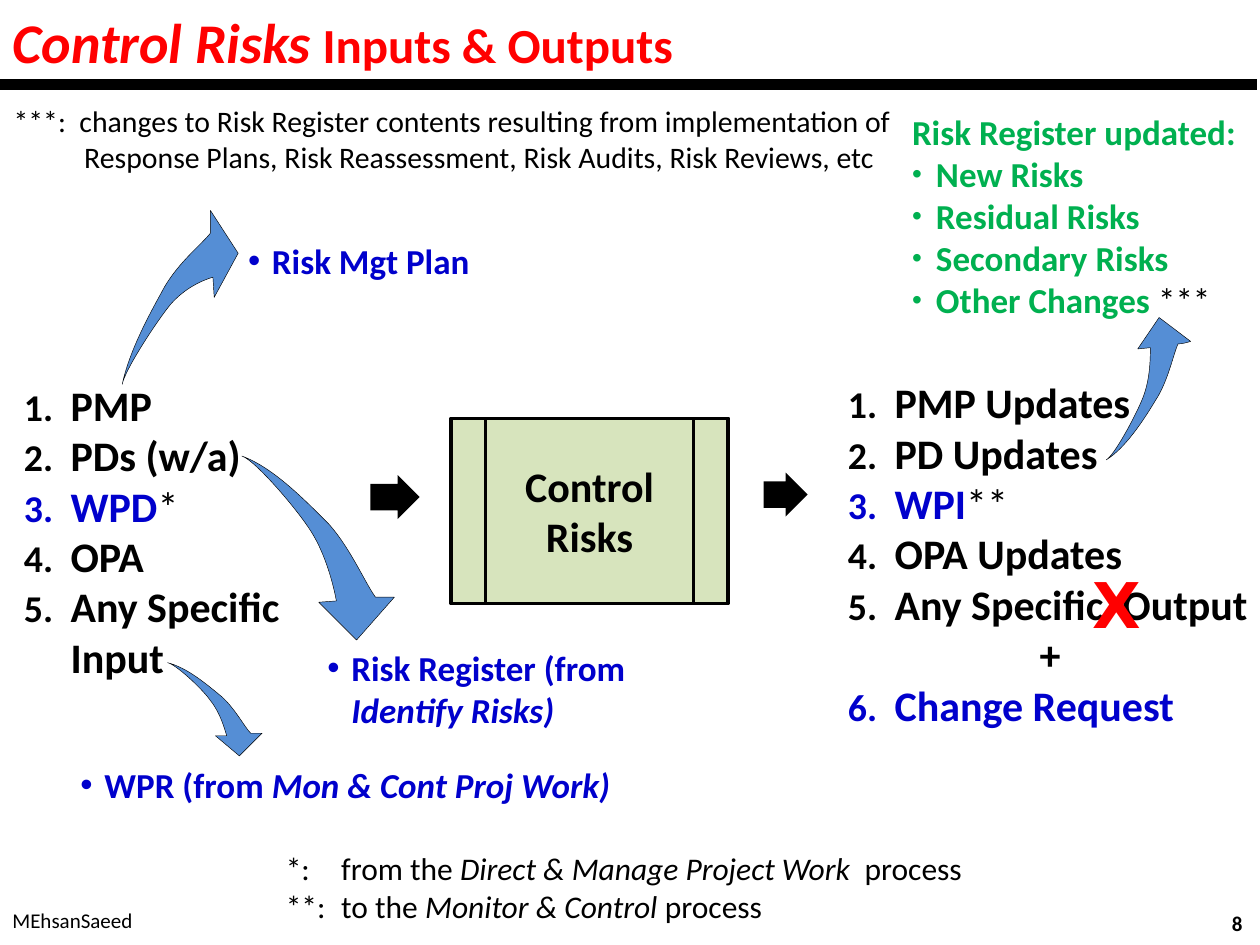
from lxml import etree
from pptx import Presentation
from pptx import util as u
from pptx.dml.color import RGBColor
from pptx.enum import shapes, text
from pptx.oxml.ns import qn

BLACK = RGBColor(0x00, 0x00, 0x00)
RED = RGBColor(0xFF, 0x00, 0x00)
BLUE = RGBColor(0x00, 0x00, 0xCC)
GREEN = RGBColor(0x00, 0xB0, 0x50)
PALE_GREEN = RGBColor(0xD7, 0xE4, 0xBD)
ARROW_BLUE = RGBColor(0x55, 0x8E, 0xD5)
LEFT, CENTER, RIGHT = text.PP_ALIGN.LEFT, text.PP_ALIGN.CENTER, text.PP_ALIGN.RIGHT
TOP, MIDDLE = text.MSO_ANCHOR.TOP, text.MSO_ANCHOR.MIDDLE

PLAN_ARROW = [
    [(0.97, 3.05)], [(0.99, 2.94), (1.23, 2.57), (1.35, 2.42)],
    [(1.47, 2.28), (1.62, 2.22), (1.69, 2.2)], [(1.7, 2.36)], [(1.89, 2.01)],
    [(1.67, 1.67)], [(1.67, 1.73), (1.67, 1.79), (1.67, 1.85)],
    [(1.6, 1.94), (1.43, 2.07), (1.31, 2.27)], [(1.2, 2.47), (1.03, 2.77), (0.97, 3.05)],
]
REGISTER_ARROW = [
    [(1.92, 3.62)], [(2.02, 3.65), (2.35, 4.03), (2.47, 4.22)],
    [(2.59, 4.41), (2.65, 4.66), (2.67, 4.77)], [(2.53, 4.78)], [(2.83, 5.08)],
    [(3.13, 4.74)], [(3.08, 4.74), (3.03, 4.74), (2.98, 4.74)],
    [(2.9, 4.63), (2.78, 4.35), (2.61, 4.16)], [(2.43, 3.98), (2.17, 3.71), (1.92, 3.62)],
]
UPDATES_ARROW = [
    [(8.78, 3.65)], [(8.84, 3.62), (9.01, 3.31), (9.07, 3.16)],
    [(9.13, 3.01), (9.13, 2.84), (9.13, 2.76)], [(9.03, 2.77)], [(9.2, 2.52)],
    [(9.45, 2.71)], [(9.42, 2.72), (9.38, 2.73), (9.35, 2.73)],
    [(9.31, 2.82), (9.27, 3.03), (9.17, 3.18)], [(9.08, 3.33), (8.93, 3.56), (8.78, 3.65)],
]
REPORTS_ARROW = [
    [(1.33, 5.26)], [(1.39, 5.27), (1.6, 5.46), (1.67, 5.56)],
    [(1.75, 5.66), (1.78, 5.78), (1.8, 5.84)], [(1.71, 5.84)], [(1.9, 6)],
    [(2.08, 5.82)], [(2.05, 5.82), (2.02, 5.82), (1.99, 5.82)],
    [(1.94, 5.77), (1.87, 5.63), (1.76, 5.53)], [(1.65, 5.44), (1.49, 5.3), (1.33, 5.26)],
]


def inches(values):
    """Convert a sequence of numbers to lengths."""
    return [u.Inches(value) for value in values]


def place(shape, box):
    """Move and size a shape to a left, top, width, height box."""
    shape.left, shape.top, shape.width, shape.height = inches(box)


def set_list_style(paragraph, indent=0, bullet=None, start=1, percent=100):
    """Set the hanging indent and the bullet: None, a character or 'number'."""
    properties = paragraph._p.get_or_add_pPr()
    properties.set("marL", str(u.Inches(indent)))
    properties.set("indent", str(-u.Inches(indent)))
    if bullet is None:
        etree.SubElement(properties, qn("a:buNone"))
        return
    etree.SubElement(properties, qn("a:buSzPct"), val=str(percent * 1000))
    if bullet == "number":
        numbering = etree.SubElement(properties, qn("a:buAutoNum"), type="arabicPeriod")
        if start > 1:
            numbering.set("startAt", str(start))
    else:
        etree.SubElement(properties, qn("a:buFont"), typeface="Arial")
        etree.SubElement(properties, qn("a:buChar"), char=bullet)


def add_run(paragraph, words, size, color=BLACK, bold=False, italic=False, font="Calibri"):
    """Add one formatted run."""
    run = paragraph.add_run()
    run.text = words
    run.font.name, run.font.size = font, u.Pt(size)
    run.font.bold, run.font.italic = bold, italic
    run.font.color.rgb = color


def write(shape, paragraphs, size, anchor=TOP, align=LEFT, wrap=True):
    """Fill a shape with (runs, list style) pairs, a run being (words, run format)."""
    frame = shape.text_frame
    frame.auto_size = text.MSO_AUTO_SIZE.NONE
    frame.word_wrap, frame.vertical_anchor = wrap, anchor
    for index, (runs, style) in enumerate(paragraphs):
        paragraph = frame.add_paragraph() if index else frame.paragraphs[0]
        style = dict(style)
        paragraph.alignment = style.pop("align", align)
        paragraph.space_before = u.Pt(0)
        set_list_style(paragraph, **style)
        for words, run_format in runs:
            add_run(paragraph, words, **{"size": size, **run_format})


def add_text(slide, box, paragraphs, size, **layout):
    """Add a text box."""
    write(slide.shapes.add_textbox(*inches(box)), paragraphs, size, **layout)


def add_preset(slide, kind, box, fill, line_width=None):
    """Add a preset shape, outlined in black if a line width is given."""
    shape = slide.shapes.add_shape(kind, *inches(box))
    paint(shape, fill, line_width)
    return shape


def paint(shape, fill, line_width):
    """Set the fill and line of a shape without a shadow."""
    shape.shadow.inherit = False
    shape.fill.solid()
    shape.fill.fore_color.rgb = fill
    if line_width is None:
        shape.line.fill.background()
    else:
        shape.line.color.rgb = BLACK
        shape.line.width = u.Pt(line_width)


def add_block_arrow(slide, box):
    """Add a black arrow pointing right."""
    arrow = add_preset(slide, shapes.MSO_SHAPE.RIGHT_ARROW, box, BLACK)
    arrow.adjustments[0], arrow.adjustments[1] = 0.6, 0.5


def add_curved_arrow(slide, outline):
    """Add a swooping arrow from line (one point) and curve (three points) segments."""
    corners = [inches(segment[-1]) for segment in outline]
    builder = slide.shapes.build_freeform(*corners[0])
    builder.add_line_segments(corners[1:], close=True)
    arrow = builder.convert_to_shape()
    sides = list(arrow._element.iter(qn("a:lnTo")))
    for side, segment in zip(sides, outline[1:]):
        if len(segment) == 3:
            side.getparent().replace(side, make_curve(segment, arrow.left, arrow.top))
    paint(arrow, ARROW_BLUE, 0.25)


def make_curve(segment, left, top):
    """Return a cubic curve element with points relative to left and top."""
    curve = etree.Element(qn("a:cubicBezTo"))
    for x, y in segment:
        etree.SubElement(curve, qn("a:pt"), x=str(u.Inches(x) - left), y=str(u.Inches(y) - top))
    return curve


def add_rule(slide, left, right, top):
    """Add the thick rule under the title."""
    rule = slide.shapes.add_connector(
        shapes.MSO_CONNECTOR.STRAIGHT, *inches((left, top, right, top)))
    rule.line.color.rgb, rule.line.width = BLACK, u.Pt(6)
    etree.SubElement(rule._element.spPr, qn("a:effectLst"))


def main():
    """Build the slide."""
    presentation = Presentation()
    presentation.slide_width, presentation.slide_height = inches((10, 7.5))
    slide = presentation.slides.add_slide(presentation.slide_layouts[3])
    title, inputs, outputs = slide.placeholders
    bold, blue, green = {"bold": True}, {"bold": True, "color": BLUE}, {"bold": True, "color": GREEN}
    red, blue_italic = {"bold": True, "color": RED}, {**blue, "italic": True}
    number = {"indent": 0.37, "bullet": "number", "percent": 90}
    dot = {"indent": 0.19, "bullet": "•"}
    small_dot = {**dot, "percent": 80}
    note = {"indent": 0.44}

    place(title, (0, 0, 9.94, 0.66))
    write(title, [([("Control Risks", {**red, "italic": True, "size": 32}),
                    (" Inputs & Outputs", red)], {})], 28, anchor=MIDDLE)
    add_rule(slide, -0.02, 9.98, 0.67)

    place(inputs, (0.09, 2.96, 2.96, 2.52))
    write(inputs, [([("PMP", bold)], number), ([("PDs (w/a)", bold)], number),
                   ([("WPD", blue), ("*", {})], number), ([("OPA", bold)], number),
                   ([("Any Specific Input", bold)], number)], 24)
    place(outputs, (6.63, 2.94, 3.41, 2.93))
    write(outputs, [([("PMP Updates", bold)], number), ([("PD Updates", bold)], number),
                    ([("WPI", blue), ("**", {})], number), ([("OPA Updates", bold)], number),
                    ([("Any Specific  Output", bold)], number),
                    ([("+", bold)], {"align": CENTER}),
                    ([("Change Request", blue)], {**number, "start": 6})], 24, wrap=False)

    process = add_preset(slide, shapes.MSO_SHAPE.FLOWCHART_PREDEFINED_PROCESS,
                         (3.58, 3.32, 2.2, 1.47), PALE_GREEN, 2)
    write(process, [([("Control Risks", bold)], {})], 24, anchor=MIDDLE, align=CENTER)
    add_block_arrow(slide, (2.94, 3.77, 0.39, 0.35))
    add_block_arrow(slide, (6.06, 3.75, 0.35, 0.35))
    for outline in (PLAN_ARROW, REGISTER_ARROW, UPDATES_ARROW, REPORTS_ARROW):
        add_curved_arrow(slide, outline)

    add_text(slide, (1.87, 1.85, 3.79, 0.44), [([("Risk Mgt Plan", blue)], dot)], 20)
    add_text(slide, (2.5, 5.08, 3.48, 0.77),
             [([("Risk Register (from ", blue), ("Identify Risks)", blue_italic)], dot)], 20)
    add_text(slide, (0.54, 6.01, 4.59, 0.44),
             [([("WPR (from ", blue), ("Mon & Cont Proj Work)", blue_italic)], dot)], 20)
    add_text(slide, (7.14, 0.83, 2.86, 1.85),
             [([("Risk Register updated:", green)], {}), ([("New Risks", green)], small_dot),
              ([("Residual Risks", green)], small_dot), ([("Secondary Risks", green)], small_dot),
              ([("Other Changes ", green), ("***", {})], small_dot)], 20)
    add_text(slide, (8.57, 4.44, 0.72, 0.71),
             [([("X", {**red, "font": "DejaVu Sans"})], {})], 36, wrap=False)
    add_text(slide, (0.01, 0.77, 7.33, 0.67),
             [([("***:  changes to Risk Register contents resulting from implementation of "
                 "Response Plans, Risk Reassessment, Risk Audits, Risk Reviews, etc", {})],
               {"indent": 0.56})], 17)
    add_text(slide, (2.17, 6.69, 5.67, 0.71),
             [([("*:\tfrom the ", {}), ("Direct & Manage Project Work  ", {"italic": True}),
                ("process", {})], note),
              ([("**:\tto the ", {}), ("Monitor & Control ", {"italic": True}),
                ("process", {})], note)], 18)
    add_text(slide, (0, 7.1, 3.17, 0.4), [([("MEhsanSaeed", {})], {})], 12, anchor=MIDDLE)
    add_text(slide, (7.63, 7.13, 2.33, 0.4), [([("8", bold)], {})], 12,
             anchor=MIDDLE, align=RIGHT)
    presentation.save("out.pptx")


if __name__ == "__main__":
    main()
